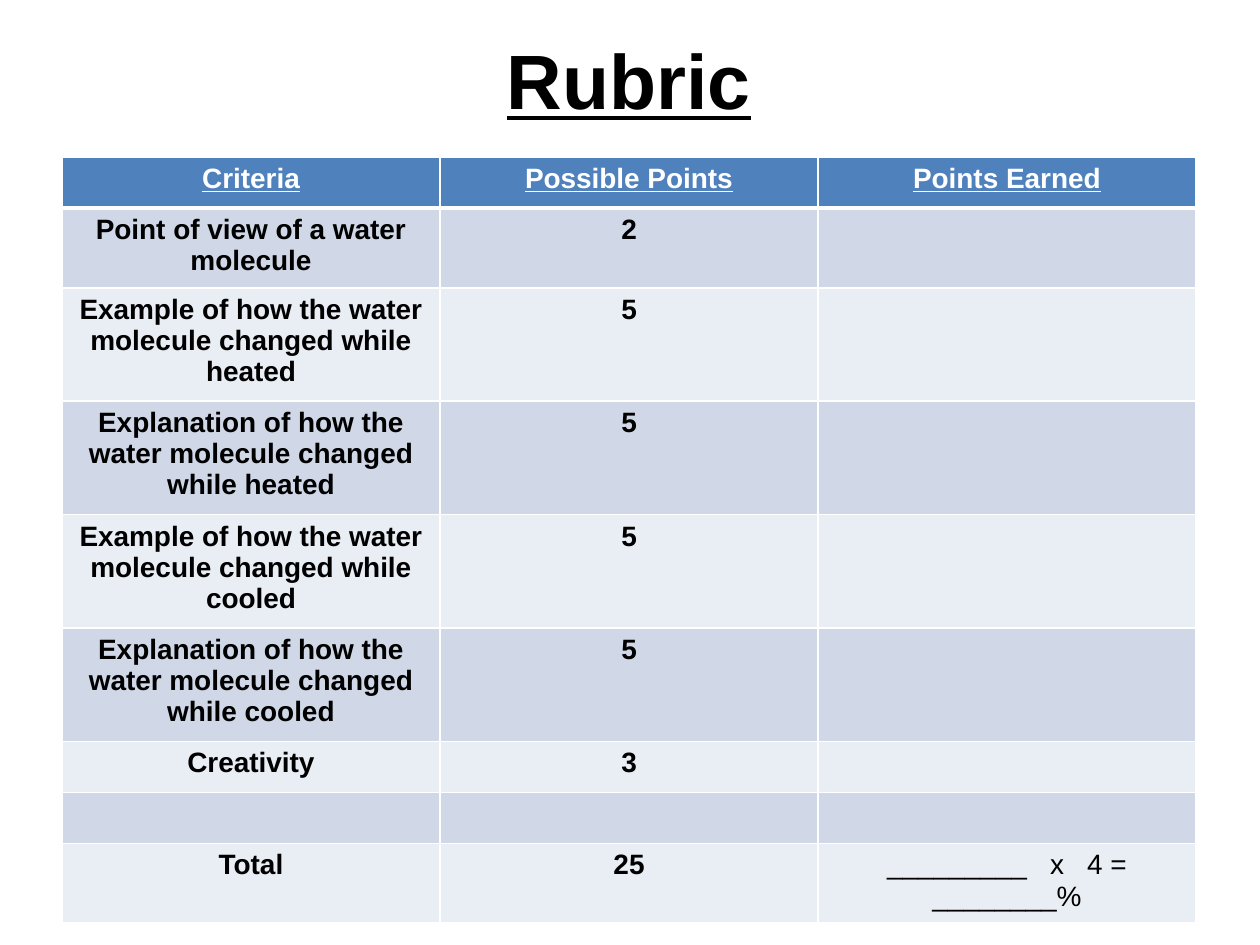
from lxml.etree import SubElement
from pptx import Presentation
from pptx.dml.color import RGBColor
from pptx.enum.text import MSO_ANCHOR, PP_ALIGN
from pptx.oxml.ns import qn
from pptx.util import Pt

PX = 914400 / 126
WHITE = RGBColor(0xFF, 0xFF, 0xFF)
BLACK = RGBColor(0x00, 0x00, 0x00)
HEADER_BLUE = RGBColor(0x4F, 0x81, 0xBD)
DARK_BAND = RGBColor(0xD0, 0xD8, 0xE8)
LIGHT_BAND = RGBColor(0xE9, 0xED, 0xF4)

LEFT, WIDTH = 62, 1134
TITLE_HEIGHT = 157
ROWS = [
    (51, "Criteria", "Possible Points", "Points Earned"),
    (75, "Point of view of a water molecule", "2", ""),
    (106, "Example of how the water molecule changed while heated", "5", ""),
    (106, "Explanation of how the water molecule changed while heated", "5", ""),
    (106, "Example of how the water molecule changed while cooled", "5", ""),
    (106, "Explanation of how the water molecule changed while cooled", "5", ""),
    (51, "Creativity", "3", ""),
    (51, "", "", ""),
    (75, "Total", "25", "_________   x   4 = ________%"),
]


def px(length):
    return round(length * PX)


def write(text_frame, text, size, color, bold=True, underline=False):
    """Fill a frame with one centred, formatted line of text."""
    text_frame.text = text
    paragraph = text_frame.paragraphs[0]
    paragraph.alignment = PP_ALIGN.CENTER
    for run in paragraph.runs:
        font = run.font
        font.name, font.size, font.bold = "Arial", Pt(size), bold
        font.underline = underline
        font.color.rgb = color


presentation = Presentation()
presentation.slide_width, presentation.slide_height = px(1260), px(945)
slide = presentation.slides.add_slide(presentation.slide_layouts[6])

title = slide.shapes.add_textbox(px(LEFT), 0, px(WIDTH), px(TITLE_HEIGHT))
title.text_frame.word_wrap = True
title.text_frame.vertical_anchor = MSO_ANCHOR.MIDDLE
write(title.text_frame, "Rubric", 44, BLACK, underline=True)

table_height = sum(row[0] for row in ROWS)
table = slide.shapes.add_table(
    len(ROWS), 3, px(LEFT), px(TITLE_HEIGHT), px(WIDTH), px(table_height)
).table
table.horz_banding = False
for column in table.columns:
    column.width = px(WIDTH // 3)

for row_index, (height, *texts) in enumerate(ROWS):
    table.rows[row_index].height = px(height)
    is_header = row_index == 0
    band = DARK_BAND if row_index % 2 else LIGHT_BAND
    for column_index, text in enumerate(texts):
        cell = table.cell(row_index, column_index)
        is_score_formula = column_index == 2 and not is_header
        write(cell.text_frame, text, 16, WHITE if is_header else BLACK,
              bold=not is_score_formula, underline=is_header)

        properties = cell._tc.get_or_add_tcPr()
        for side in ("lnL", "lnR", "lnT", "lnB"):
            below_header = (row_index, side) in ((0, "lnB"), (1, "lnT"))
            line = SubElement(properties, qn(f"a:{side}"), w=str(Pt(3 if below_header else 1)))
            fill = SubElement(line, qn("a:solidFill"))
            SubElement(fill, qn("a:srgbClr"), val=str(WHITE))

        cell.fill.solid()
        cell.fill.fore_color.rgb = HEADER_BLUE if is_header else band

presentation.save("out.pptx")
